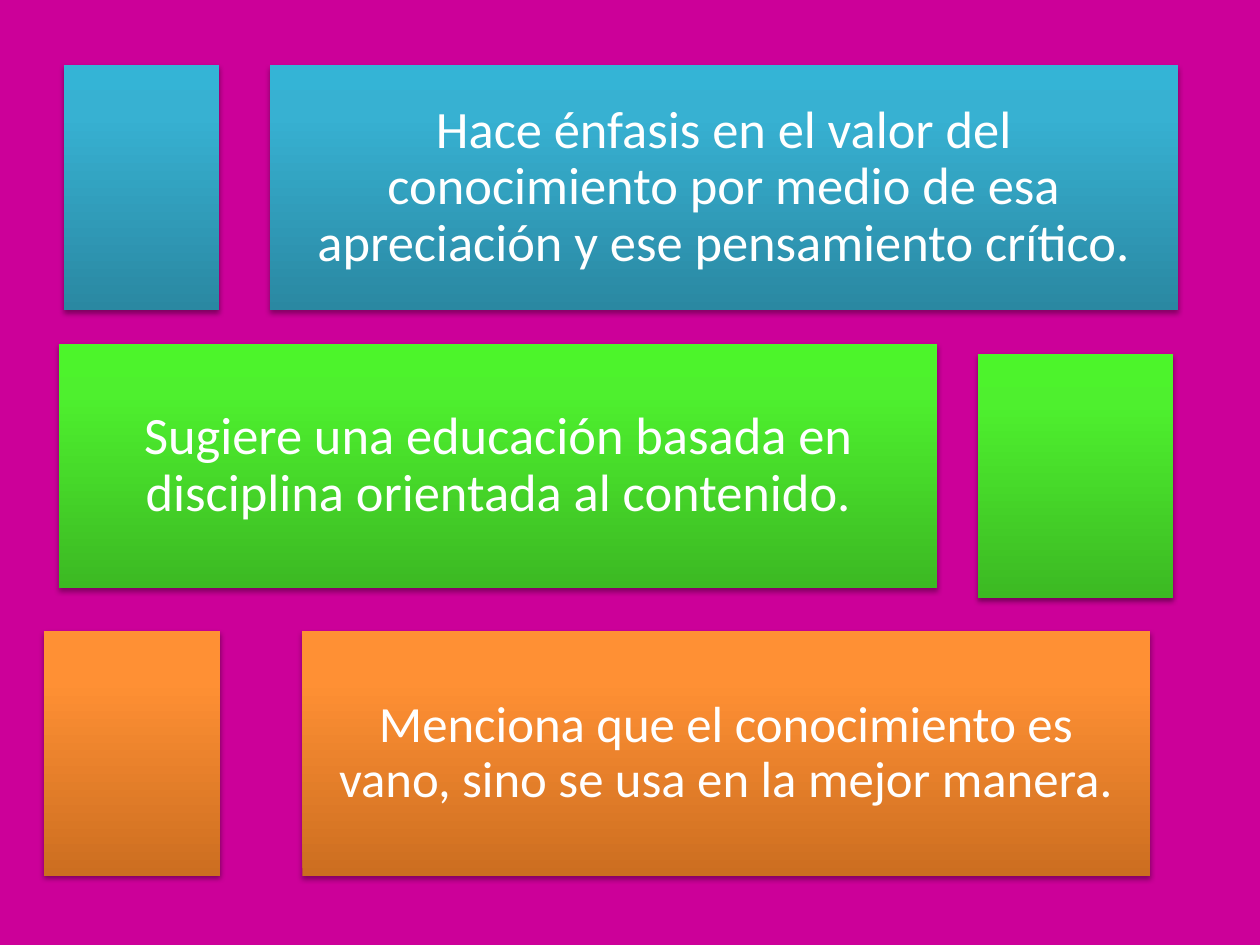
from pptx import Presentation
from pptx.dml.color import RGBColor
from pptx.enum.shapes import MSO_SHAPE
from pptx.enum.text import MSO_ANCHOR, PP_ALIGN
from pptx.oxml import parse_xml
from pptx.oxml.ns import nsdecls, qn
from pptx.util import Inches, Pt

COLORS = {"back": "CC0099", "text": "FFFFFF", "shadow": "000000"}
# Gradient stops from the bottom edge to the top
GRADS = {
    "blue": {0: "2A88A2", 80: "37B1D2", 100: "34B4D6"},
    "green": {0: "3CB923", 80: "4EF02E", 100: "4CF52A"},
    "orange": {0: "CC6E20", 80: "FF9034", 100: "FF9136"},
}
HEIGHT = 1.94

# color, panel (left, top, width), square (left, top, width), text size, text
ROWS = [
    ("blue", (2.14, 0.52, 7.21), (0.51, 0.52, 1.23), 30,
     "Hace énfasis en el valor del conocimiento por medio de esa "
     "apreciación y ese pensamiento crítico."),
    ("green", (0.47, 2.73, 6.97), (7.76, 2.81, 1.55), 30,
     "Sugiere una educación basada en disciplina orientada al contenido."),
    ("orange", (2.4, 5.01, 6.73), (0.35, 5.01, 1.4), 29,
     "Menciona que el conocimiento es vano, sino se usa en la mejor manera."),
]


class Deck:
    def __init__(self, slide, font="Calibri"):
        self.slide = slide
        self.font = font

    def back(self, color):
        fill = self.slide.background.fill
        fill.solid()
        fill.fore_color.rgb = RGBColor.from_string(color)

    def block(self, place, grad, alpha, dist):
        """Draw a gradient rectangle with a soft shadow straight below it."""
        left, top, width = place
        shape = self.slide.shapes.add_shape(
            MSO_SHAPE.RECTANGLE, Inches(left), Inches(top),
            Inches(width), Inches(HEIGHT))
        shape.line.fill.background()
        self.shade(shape, grad)
        self.shadow(shape, alpha, dist)
        return shape

    def shade(self, shape, grad):
        stops = "".join(
            f'<a:gs pos="{pos * 1000}"><a:srgbClr val="{color}"/></a:gs>'
            for pos, color in grad.items())
        shape.fill.background()
        props = shape._element.spPr
        props.replace(props.find(qn("a:noFill")), parse_xml(
            f'<a:gradFill {nsdecls("a")} rotWithShape="1">'
            f'<a:gsLst>{stops}</a:gsLst>'
            '<a:lin ang="16200000" scaled="0"/></a:gradFill>'))

    def shadow(self, shape, alpha, dist):
        shape.shadow.inherit = False
        effects = shape._element.spPr.find(qn("a:effectLst"))
        effects.append(parse_xml(
            f'<a:outerShdw {nsdecls("a")} blurRad="{Pt(3.1)}" '
            f'dist="{Pt(dist)}" dir="5400000" rotWithShape="0">'
            f'<a:srgbClr val="{COLORS["shadow"]}">'
            f'<a:alpha val="{alpha * 1000}"/></a:srgbClr></a:outerShdw>'))

    def panel(self, place, grad, text, size):
        frame = self.block(place, grad, 35, 1.8).text_frame
        frame.word_wrap = True
        frame.vertical_anchor = MSO_ANCHOR.MIDDLE
        frame.margin_left = frame.margin_right = Inches(0.12)
        frame.margin_top = frame.margin_bottom = Inches(0.12)
        frame.text = text
        para = frame.paragraphs[0]
        para.alignment = PP_ALIGN.CENTER
        para.line_spacing = 0.9
        font = para.runs[0].font
        font.name = self.font
        font.size = Pt(size)
        font.color.rgb = RGBColor.from_string(COLORS["text"])

    def square(self, place, grad):
        self.block(place, grad, 38, 1.6)


def main():
    prs = Presentation()
    prs.slide_width, prs.slide_height = Inches(10), Inches(7.5)
    deck = Deck(prs.slides.add_slide(prs.slide_layouts[6]))
    deck.back(COLORS["back"])
    for color, panel, square, size, text in ROWS:
        deck.panel(panel, GRADS[color], text, size)
        deck.square(square, GRADS[color])
    prs.save("out.pptx")


if __name__ == "__main__":
    main()
